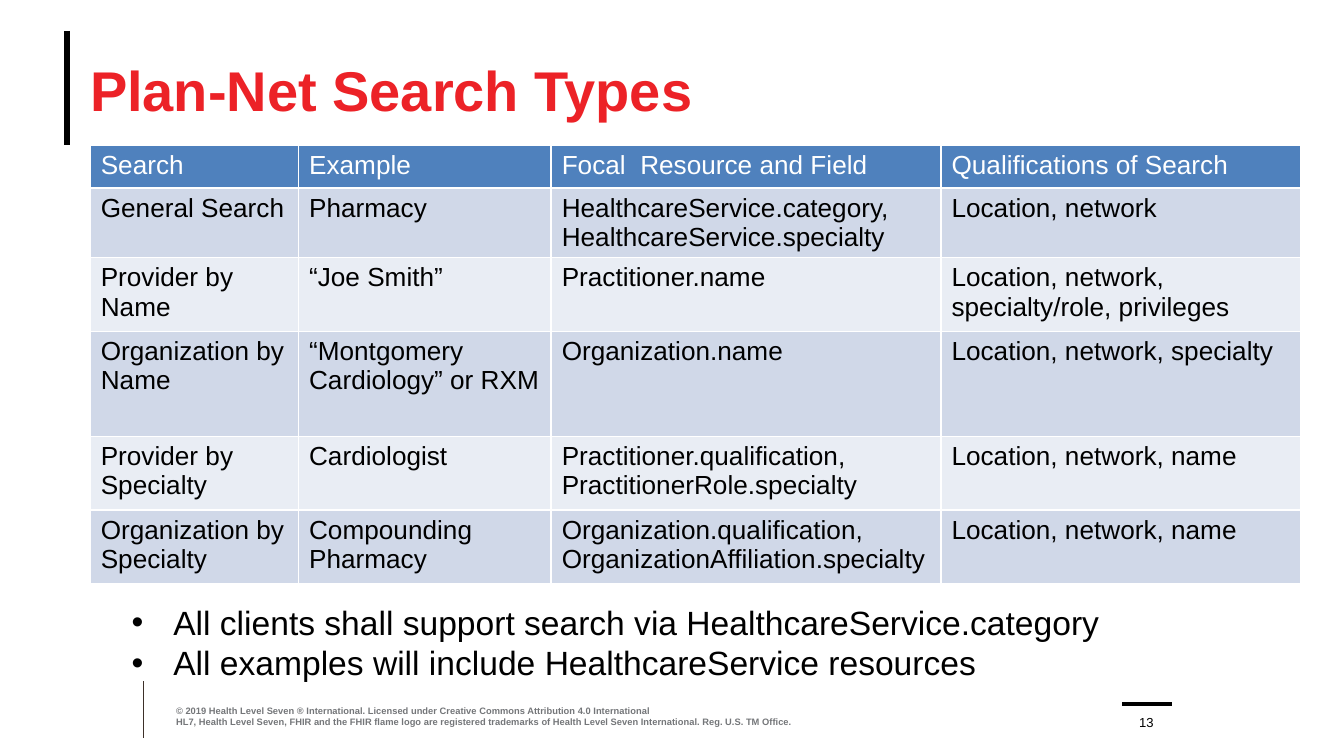
from dataclasses import dataclass

from lxml import etree
from pptx import Presentation
from pptx.dml.color import RGBColor
from pptx.enum.shapes import MSO_CONNECTOR
from pptx.enum.text import MSO_ANCHOR, MSO_AUTO_SIZE, PP_ALIGN
from pptx.oxml.ns import qn
from pptx.util import Inches, Pt

STRAIGHT = MSO_CONNECTOR.STRAIGHT
TOP, MIDDLE, BOTTOM = MSO_ANCHOR.TOP, MSO_ANCHOR.MIDDLE, MSO_ANCHOR.BOTTOM
LEFT, CENTER = PP_ALIGN.LEFT, PP_ALIGN.CENTER
NO_AUTOFIT = MSO_AUTO_SIZE.NONE

BLACK = RGBColor(0x00, 0x00, 0x00)
WHITE = RGBColor(0xFF, 0xFF, 0xFF)
RED = RGBColor(0xEC, 0x22, 0x27)
BROWN = RGBColor(0x3D, 0x30, 0x29)
GRAY = RGBColor(0x74, 0x76, 0x79)
HEADER_BLUE = RGBColor(0x4F, 0x81, 0xBD)
BANDS = (RGBColor(0xD0, 0xD8, 0xE8), RGBColor(0xE9, 0xED, 0xF4))
FONT = "Arial"


@dataclass(frozen=True)
class Rule:
    start: tuple[float, float]
    end: tuple[float, float]
    color: RGBColor
    width: float


@dataclass(frozen=True)
class TextStyle:
    size: float
    color: RGBColor
    bold: bool = False
    align: PP_ALIGN = LEFT


RULES = (
    Rule((0.5, 0.23), (0.5, 1.08), BLACK, 3.25),
    Rule((1.07, 5.07), (1.07, 5.49), BROWN, 0.5),
    Rule((8.35, 5.24), (8.72, 5.24), BLACK, 2),
)
TITLE = TextStyle(30, RED, bold=True)
BODY = TextStyle(18, BLACK)
FOOTER = TextStyle(5, GRAY, bold=True)
PAGE_NUMBER = TextStyle(7, BLACK, align=CENTER)
HEADER_CELL = TextStyle(14, WHITE)
BODY_CELL = TextStyle(14, BLACK)

COLUMN_WIDTHS = (1.55, 1.88, 2.9, 2.68)
ROW_HEIGHTS = (0.32, 0.32, 0.55, 0.78, 0.55, 0.55)
SEARCH_TYPES = (
    ("Search", "Example", "Focal  Resource and Field", "Qualifications of Search"),
    ("General Search", "Pharmacy",
     "HealthcareService.category, HealthcareService.specialty", "Location, network"),
    ("Provider by Name", "“Joe Smith”", "Practitioner.name",
     "Location, network, specialty/role, privileges"),
    ("Organization by Name", "“Montgomery Cardiology” or RXM", "Organization.name",
     "Location, network, specialty"),
    ("Provider by Specialty", "Cardiologist",
     "Practitioner.qualification, PractitionerRole.specialty", "Location, network, name"),
    ("Organization by Specialty", "Compounding Pharmacy",
     "Organization.qualification,\vOrganizationAffiliation.specialty",
     "Location, network, name"),
)
NOTES = (
    "All clients shall support search via HealthcareService.category",
    "All examples will include HealthcareService resources",
)
COPYRIGHT = (
    "© 2019 Health Level Seven ® International. Licensed under Creative Commons "
    "Attribution 4.0 International",
    "HL7, Health Level Seven, FHIR and the FHIR flame logo are registered trademarks "
    "of Health Level Seven International. Reg. U.S. TM Office.",
)


def place(shape, left: float, top: float, width: float, height: float) -> None:
    shape.left, shape.top = Inches(left), Inches(top)
    shape.width, shape.height = Inches(width), Inches(height)


def style_paragraph(para, style: TextStyle) -> None:
    para.alignment = style.align
    para.space_before = Pt(0)
    para.font.name = FONT
    para.font.size = Pt(style.size)
    para.font.bold = style.bold
    para.font.color.rgb = style.color


def write_text(frame, lines: tuple[str, ...], style: TextStyle, anchor: MSO_ANCHOR,
               inset: tuple[float, float] = (0, 0)) -> None:
    frame.word_wrap = True
    frame.auto_size = NO_AUTOFIT
    frame.vertical_anchor = anchor
    frame.margin_left = frame.margin_right = Inches(inset[0])
    frame.margin_top = frame.margin_bottom = Inches(inset[1])
    frame.text = "\n".join(lines)
    for para in frame.paragraphs:
        style_paragraph(para, style)


def add_bullet(para, indent: float) -> None:
    properties = para._p.get_or_add_pPr()
    properties.set("marL", str(Inches(indent)))
    properties.set("indent", str(-Inches(indent)))
    etree.SubElement(properties, qn("a:buFont"), typeface=FONT)
    etree.SubElement(properties, qn("a:buChar"), char="•")


def add_rule(slide, rule: Rule) -> None:
    line = slide.shapes.add_connector(
        STRAIGHT, *(Inches(value) for value in rule.start + rule.end))
    line.line.color.rgb = rule.color
    line.line.width = Pt(rule.width)
    etree.SubElement(line._element.spPr, qn("a:effectLst"))


def add_borders(cell) -> None:
    """Draw white cell borders; call before filling the cell to keep XML order."""
    properties = cell._tc.get_or_add_tcPr()
    for side in "LRTB":
        border = etree.SubElement(properties, qn(f"a:ln{side}"), w=str(Pt(1)))
        fill = etree.SubElement(border, qn("a:solidFill"))
        etree.SubElement(fill, qn("a:srgbClr"), val=str(WHITE))


def fill_cell(cell, text: str, style: TextStyle, color: RGBColor) -> None:
    cell.text = text
    cell.vertical_anchor = TOP
    cell.margin_left = cell.margin_right = Inches(0.08)
    cell.margin_top = cell.margin_bottom = Inches(0.04)
    style_paragraph(cell.text_frame.paragraphs[0], style)
    add_borders(cell)
    cell.fill.solid()
    cell.fill.fore_color.rgb = color


def add_search_table(slide) -> None:
    table = slide.shapes.add_table(
        len(ROW_HEIGHTS), len(COLUMN_WIDTHS), Inches(0.67), Inches(1.08),
        Inches(sum(COLUMN_WIDTHS)), Inches(sum(ROW_HEIGHTS))).table
    for column, width in zip(table.columns, COLUMN_WIDTHS):
        column.width = Inches(width)
    for row, height in zip(table.rows, ROW_HEIGHTS):
        row.height = Inches(height)
    for row_index, texts in enumerate(SEARCH_TYPES):
        is_header = row_index == 0
        style = HEADER_CELL if is_header else BODY_CELL
        color = HEADER_BLUE if is_header else BANDS[(row_index - 1) % 2]
        for column_index, text in enumerate(texts):
            fill_cell(table.cell(row_index, column_index), text, style, color)


def add_label(slide, position: tuple[float, float, float, float],
              lines: tuple[str, ...], style: TextStyle) -> None:
    box = slide.shapes.add_textbox(*(Inches(value) for value in position))
    write_text(box.text_frame, lines, style, BOTTOM)


def main() -> None:
    deck = Presentation()
    deck.slide_width = Inches(10)
    deck.slide_height = deck.slide_width * 9 // 16
    slide = deck.slides.add_slide(deck.slide_layouts[1])

    for rule in RULES:
        add_rule(slide, rule)

    title = slide.shapes.title
    place(title, 0.67, 0.23, 9, 0.86)
    write_text(title.text_frame, ("Plan-Net Search Types",), TITLE, MIDDLE)

    add_label(slide, (1.31, 5.24, 4.95, 0.17), COPYRIGHT, FOOTER)
    add_label(slide, (8.38, 5.26, 0.3, 0.17), ("13",), PAGE_NUMBER)
    add_search_table(slide)

    body = slide.placeholders[1]
    place(body, 0.88, 4.43, 9, 0.71)
    write_text(body.text_frame, NOTES, BODY, TOP, inset=(0.1, 0.05))
    for para in body.text_frame.paragraphs:
        add_bullet(para, 0.31)

    deck.save("out.pptx")


if __name__ == "__main__":
    main()
